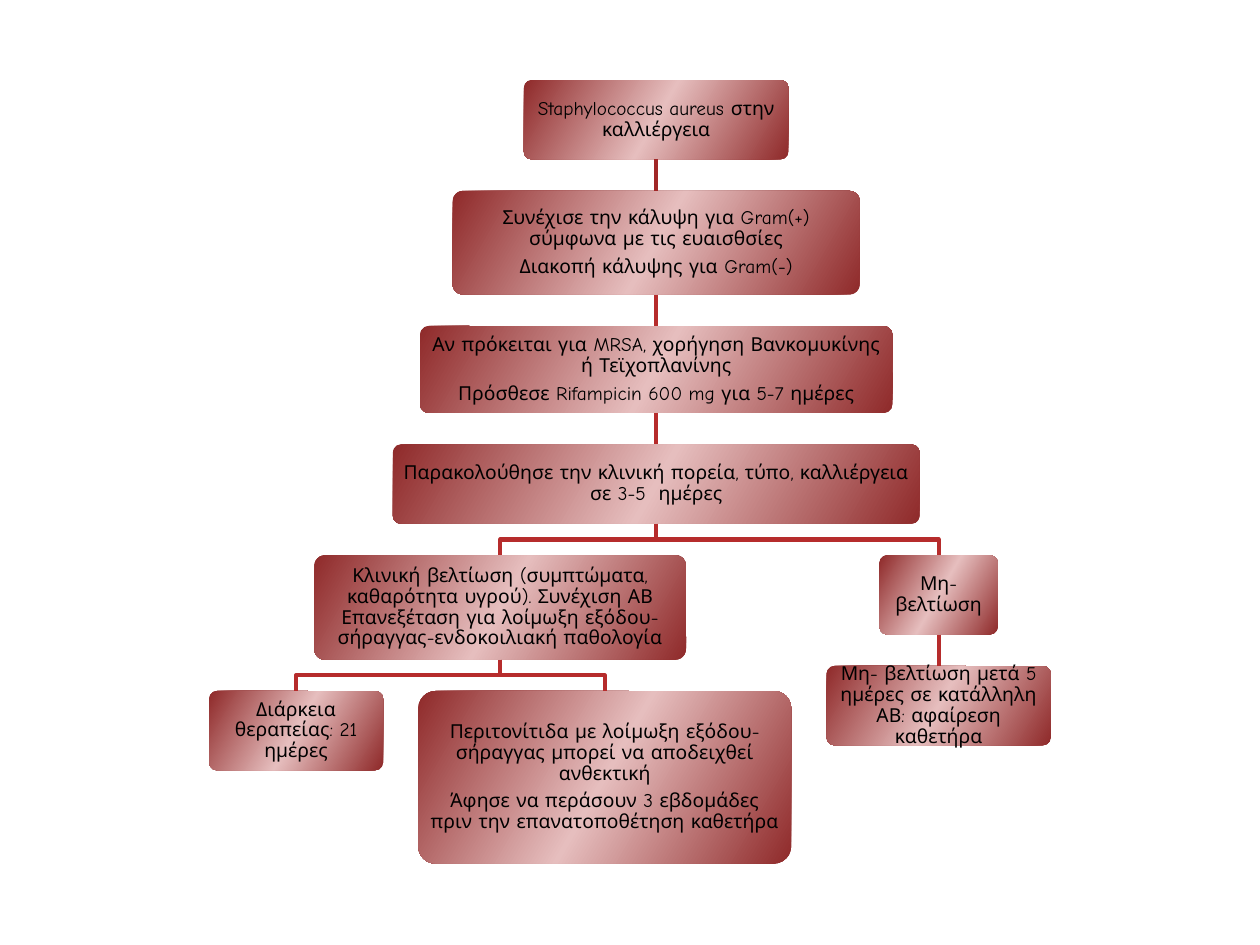
import copy
from dataclasses import dataclass
from typing import Any, Optional

import pptx
import pptx.dml.color
import pptx.enum.shapes
import pptx.enum.text
import pptx.util
from lxml import etree

Pt = pptx.util.Pt
RGB = pptx.dml.color.RGBColor.from_string
KIND = pptx.enum.shapes.MSO_SHAPE.ROUNDED_RECTANGLE
LINE = pptx.enum.shapes.MSO_CONNECTOR.STRAIGHT
BOTTOM, TOP = 2, 0
GAP = 18


@dataclass(frozen=True)
class Theme:
    dark: str = "8F2A2A"
    light: str = "E6BEBE"
    text: str = "000000"
    first: str = "A12727"
    link: str = "B62C2C"
    font: str = "Comic Neue"
    size: float = 11
    line: float = 2.36


@dataclass(frozen=True)
class Step:
    """A box of the flow chart, set below its parent."""
    mid: float
    width: float
    height: float
    lines: tuple[str, ...]
    parent: Optional["Step"] = None

    @property
    def top(self) -> float:
        return self.parent.base + GAP if self.parent else 45.8

    @property
    def base(self) -> float:
        return self.top + self.height


THEME = Theme()
FRAME = {
    "word_wrap": True,
    "vertical_anchor": pptx.enum.text.MSO_ANCHOR.MIDDLE,
    **{f"margin_{side}": Pt(3.6) for side in ("left", "top", "right", "bottom")},
}
PARA = {
    "alignment": pptx.enum.text.PP_ALIGN.CENTER,
    "line_spacing": 0.9,
    "space_after": Pt(4),
}
FONT = {"name": THEME.font, "size": Pt(THEME.size)}


def apply(item: Any, form: dict[str, Any]) -> None:
    for name, value in form.items():
        setattr(item, name, value)


def shade(shape: Any) -> None:
    """Fill with a dark, light, dark gradient."""
    fill = shape.fill
    fill.gradient()
    fill.gradient_angle = 330
    stops = shape.element.spPr.find(".//" + pptx.oxml.ns.qn("a:gsLst"))
    stops.append(copy.deepcopy(stops[-1]))
    tones = (THEME.dark, THEME.light, THEME.dark)
    for stop, place, tone in zip(fill.gradient_stops, (0, 0.5, 1), tones):
        stop.position = place
        stop.color.rgb = RGB(tone)


def draw_box(slide: Any, step: Step) -> Any:
    box = slide.shapes.add_shape(
        KIND, Pt(step.mid - step.width / 2), Pt(step.top),
        Pt(step.width), Pt(step.height))
    box.adjustments[0] = 0.1
    box.shadow.inherit = False
    box.line.fill.background()
    shade(box)
    frame = box.text_frame
    apply(frame, FRAME)
    for i, words in enumerate(step.lines):
        para = frame.add_paragraph() if i else frame.paragraphs[0]
        apply(para, PARA)
        run = para.add_run()
        run.text = words
        apply(run.font, FONT)
        run.font.color.rgb = RGB(THEME.text)
    return box


def draw_link(slide: Any, step: Step, start: Any, end: Any) -> None:
    """Join a step to its parent, with a bend where the centres differ."""
    above = step.parent
    if above.mid == step.mid:
        link = slide.shapes.add_connector(
            LINE, Pt(above.mid), Pt(above.base), Pt(step.mid), Pt(step.top))
        link.begin_connect(start, BOTTOM)
        link.end_connect(end, TOP)
        etree.SubElement(link.element.spPr, pptx.oxml.ns.qn("a:effectLst"))
    else:
        bend = above.base + GAP / 2
        pen = slide.shapes.build_freeform(Pt(above.mid), Pt(above.base))
        pen.add_line_segments(
            [(Pt(above.mid), Pt(bend)), (Pt(step.mid), Pt(bend)),
             (Pt(step.mid), Pt(step.top))], close=False)
        link = pen.convert_to_shape()
        link.fill.background()
        link.shadow.inherit = False
    link.line.width = Pt(THEME.line)
    link.line.color.rgb = RGB(THEME.link if above.parent else THEME.first)


def plan() -> list[Step]:
    germ = Step(375, 151.2, 45.3, ("Staphylococcus aureus στην καλλιέργεια",))
    cover = Step(375, 232.6, 59.2, (
        "Συνέχισε την κάλυψη για Gram(+) σύμφωνα με τις ευαισθσίες",
        "Διακοπή κάλυψης για Gram(-)"), germ)
    drug = Step(375, 270, 49.7, (
        "Αν πρόκειται για MRSA, χορήγηση Βανκομυκίνης ή Τεϊχοπλανίνης",
        "Πρόσθεσε Rifampicin 600 mg για 5-7 ημέρες"), cover)
    watch = Step(375, 301, 45.3, (
        "Παρακολούθησε την κλινική πορεία, τύπο, καλλιέργεια σε 3-5  ημέρες",),
        drug)
    well = Step(285.8, 212.4, 59.6, (
        "Κλινική βελτίωση (συμπτώματα, καθαρότητα υγρού). Συνέχιση ΑΒ "
        "Επανεξέταση για λοίμωξη εξόδου-σήραγγας-ενδοκοιλιακή παθολογία",),
        watch)
    term = Step(169.2, 99.4, 45.3, ("Διάρκεια θεραπείας: 21 ημέρες",), well)
    wait = Step(345.6, 213.1, 98.6, (
        "Περιτονίτιδα με λοίμωξη εξόδου-σήραγγας μπορεί να αποδειχθεί ανθεκτική",
        "Άφησε να περάσουν 3 εβδομάδες πριν την επανατοποθέτηση καθετήρα"),
        well)
    ill = Step(536.4, 67.7, 45.3, ("Μη-βελτίωση",), watch)
    pull = Step(536.4, 128.2, 45.3, (
        "Μη- βελτίωση μετά 5 ημέρες σε κατάλληλη ΑΒ: αφαίρεση καθετήρα",), ill)
    return [germ, cover, drug, watch, well, term, wait, ill, pull]


def main() -> None:
    deck = pptx.Presentation()
    apply(deck, {"slide_width": Pt(720), "slide_height": Pt(540)})
    slide = deck.slides.add_slide(deck.slide_layouts[6])
    boxes: dict[Step, Any] = {}
    for step in plan():
        boxes[step] = draw_box(slide, step)
        if step.parent:
            draw_link(slide, step, boxes[step.parent], boxes[step])
    deck.save("out.pptx")


if __name__ == "__main__":
    main()
